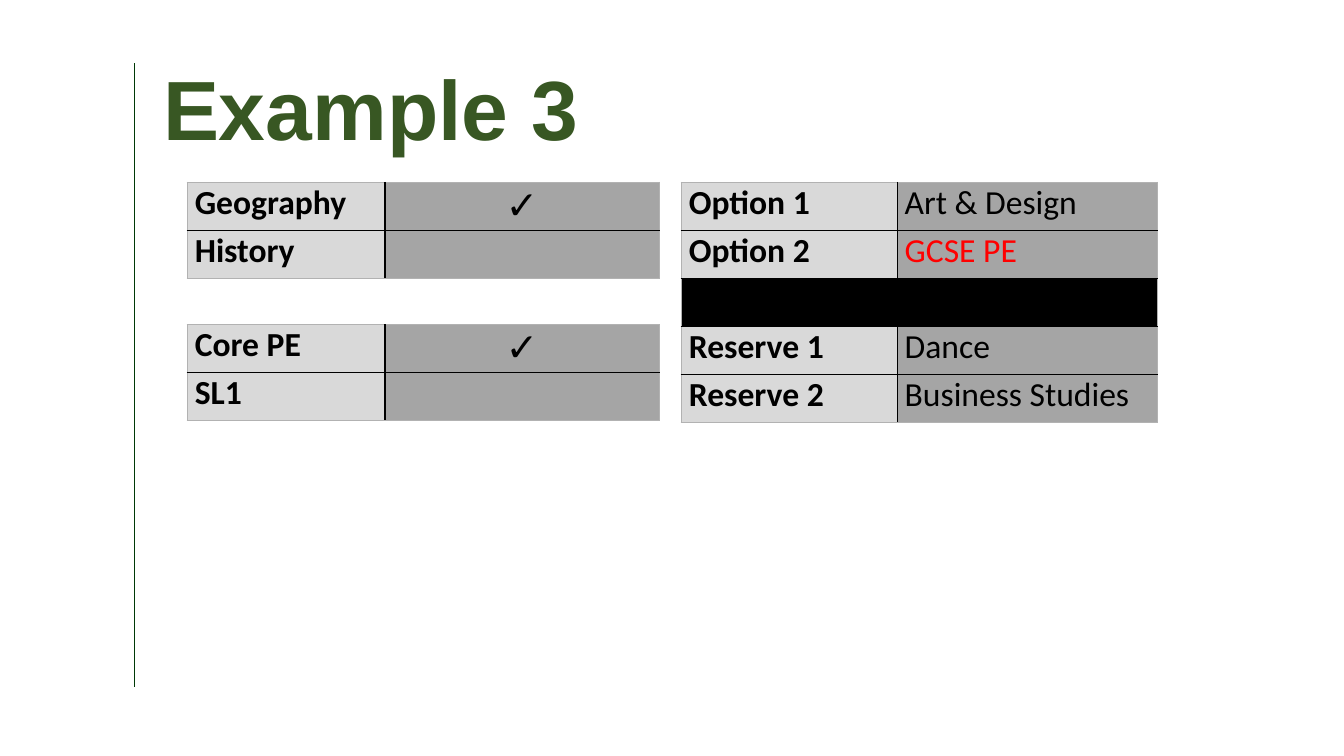
from lxml import etree
from pptx import Presentation
from pptx.dml.color import RGBColor
from pptx.enum.shapes import MSO_CONNECTOR
from pptx.enum.text import MSO_ANCHOR, PP_ALIGN
from pptx.oxml.ns import qn
from pptx.util import Cm, Pt

STRAIGHT = MSO_CONNECTOR.STRAIGHT
MIDDLE = MSO_ANCHOR.MIDDLE
LEFT, CENTER = PP_ALIGN.LEFT, PP_ALIGN.CENTER

BLACK = RGBColor(0x00, 0x00, 0x00)
RED = RGBColor(0xFF, 0x00, 0x00)
TITLE_GREEN = RGBColor(0x38, 0x57, 0x23)
RULE_GREEN = RGBColor(0x00, 0x39, 0x07)
LABEL_GREY = RGBColor(0xD9, 0xD9, 0xD9)
CHOICE_GREY = RGBColor(0xA5, 0xA5, 0xA5)
EDGE_GREY = RGBColor(0xB2, 0xB2, 0xB2)

TICK = "✓"
ROW_HEIGHT = 1.21
TABLE_TOP = 4.6
LEFT_TABLE = 4.72
LEFT_COLUMNS = (4.98, 6.91)


def write(frame, text, size=24, font="Calibri", color=BLACK, bold=False,
          align=LEFT, line_spacing=None):
    para = frame.paragraphs[0]
    para.alignment = align
    para.line_spacing = line_spacing
    span = para.add_run()
    span.text = text
    span.font.size = Pt(size)
    span.font.name = font
    span.font.bold = bold
    span.font.color.rgb = color


def set_borders(cell, colors):
    """Draw the left, right, top and bottom borders in the given colours."""
    properties = cell._tc.get_or_add_tcPr()
    for index, (side, color) in enumerate(zip("LRTB", colors)):
        line = etree.Element(qn(f"a:ln{side}"), w=str(Pt(1)))
        fill = etree.SubElement(line, qn("a:solidFill"))
        etree.SubElement(fill, qn("a:srgbClr"), val=str(color))
        properties.insert(index, line)


class SlideBuilder:
    def __init__(self, page):
        self.page = page

    def title(self, text, left, top, width, height):
        box = self.page.shapes.add_textbox(Cm(left), Cm(top), Cm(width), Cm(height))
        box.text_frame.word_wrap = True
        box.text_frame.vertical_anchor = MIDDLE
        write(box.text_frame, text, size=60, font="Arial", color=TITLE_GREEN,
              bold=True, line_spacing=0.9)

    def vertical_rule(self, left, top, bottom):
        rule = self.page.shapes.add_connector(
            STRAIGHT, Cm(left), Cm(top), Cm(left), Cm(bottom))
        rule.line.color.rgb = RULE_GREEN
        rule.line.width = Pt(0.5)
        etree.SubElement(rule._element.spPr, qn("a:effectLst"))

    def choice_table(self, rows, left, top, columns):
        """Add a table of label and choice pairs; None makes a black row."""
        frame = self.page.shapes.add_table(
            len(rows), 2, Cm(left), Cm(top),
            Cm(sum(columns)), Cm(ROW_HEIGHT * len(rows)))
        table = frame.table
        table.first_row = table.horz_banding = False
        for column, width in zip(table.columns, columns):
            column.width = Cm(width)
        for number, row in enumerate(rows):
            table.rows[number].height = Cm(ROW_HEIGHT)
            top_color = BLACK if number else EDGE_GREY
            bottom_color = BLACK if number < len(rows) - 1 else EDGE_GREY
            label, choice = table.cell(number, 0), table.cell(number, 1)
            for cell, shade in ((label, LABEL_GREY), (choice, CHOICE_GREY)):
                cell.margin_left = cell.margin_right = Cm(0.19)
                cell.margin_top = cell.margin_bottom = 0
                cell.fill.solid()
                cell.fill.fore_color.rgb = shade if row else BLACK
            set_borders(label, (EDGE_GREY, BLACK, top_color, bottom_color))
            set_borders(choice, (BLACK, EDGE_GREY, top_color, bottom_color))
            if row:
                name, answer, style = row
                write(label.text_frame, name, bold=True)
                if answer:
                    write(choice.text_frame, answer, **style)


def main():
    deck = Presentation()
    deck.slide_width, deck.slide_height = Cm(33.87), Cm(19.05)
    builder = SlideBuilder(deck.slides.add_slide(deck.slide_layouts[6]))
    tick_style = {"size": 28, "align": CENTER}

    builder.vertical_rule(3.38, 1.6, 17.32)
    builder.title("Example 3", 3.86, 1.02, 27.69, 3.68)
    for top, ticked, unticked in ((TABLE_TOP, "Geography", "History"),
                                  (8.18, "Core PE", "SL1")):
        builder.choice_table(
            [(ticked, TICK, tick_style), (unticked, "", {})],
            LEFT_TABLE, top, LEFT_COLUMNS)
    builder.choice_table(
        [("Option 1", "Art & Design", {}),
         ("Option 2", "GCSE PE", {"color": RED}),
         None,
         ("Reserve 1", "Dance", {}),
         ("Reserve 2", "Business Studies", {})],
        17.17, TABLE_TOP, (5.44, 6.55))
    deck.save("out.pptx")


if __name__ == "__main__":
    main()
